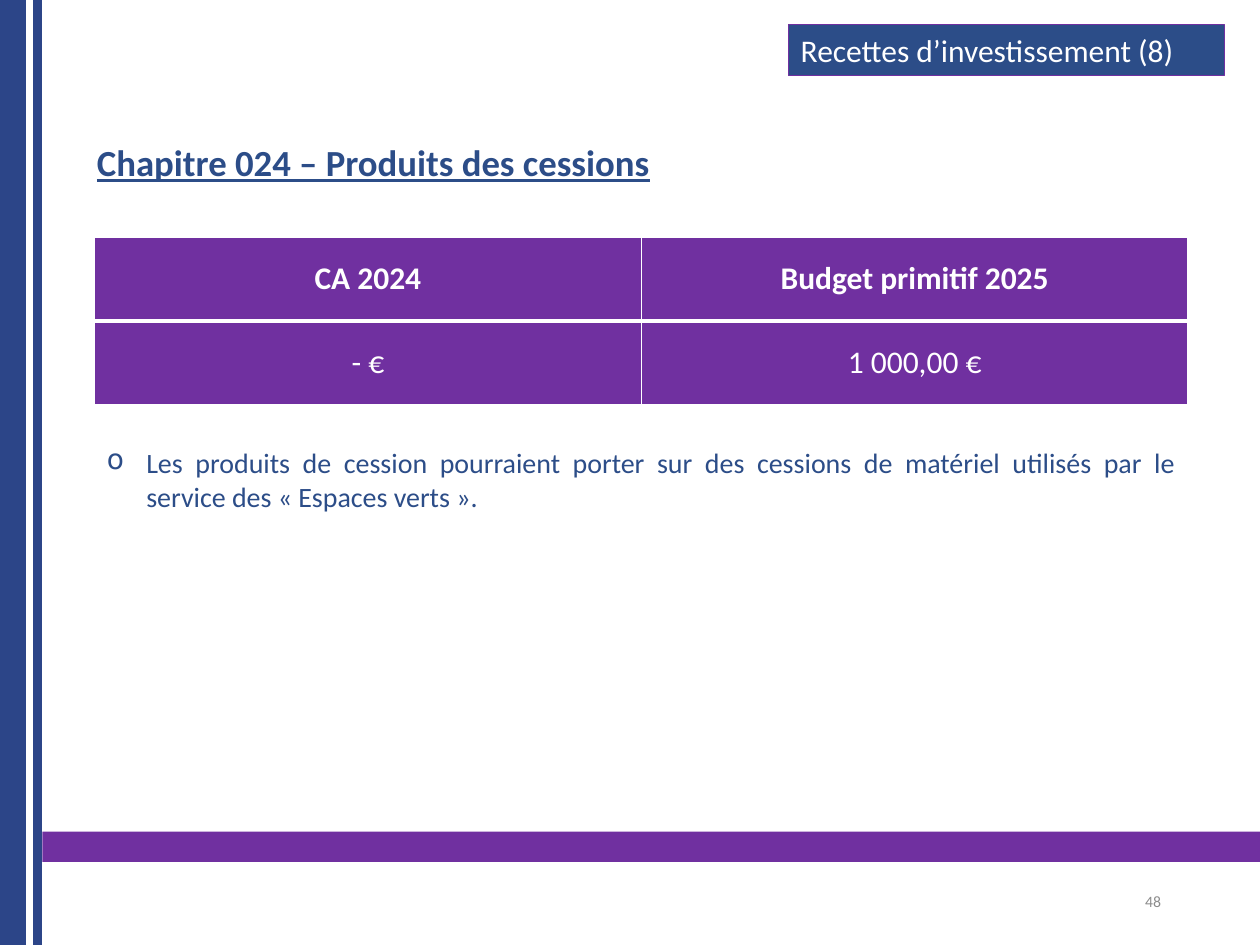
from dataclasses import dataclass
from typing import Optional

from lxml.etree import SubElement
from pptx import Presentation
from pptx.dml.color import RGBColor
from pptx.enum.shapes import MSO_SHAPE
from pptx.enum.text import MSO_ANCHOR, MSO_AUTO_SIZE, PP_ALIGN
from pptx.oxml import parse_xml
from pptx.oxml.ns import nsdecls, qn
from pptx.util import Pt


@dataclass(frozen=True)
class Theme:
    font: str = "Calibri"
    bar_blue: str = "2C4588"
    blue: str = "2C4D88"
    purple: str = "7030A0"
    white: str = "FFFFFF"
    gray: str = "8C8C8C"
    heading: float = 21
    large: float = 18
    body: float = 16
    small: float = 9


@dataclass(frozen=True)
class Area:
    left: float
    top: float
    width: float
    height: float

    def lengths(self) -> tuple:
        return tuple(Pt(n) for n in (self.left, self.top, self.width, self.height))


@dataclass(frozen=True)
class Panel:
    area: Area
    fill: str
    line: Optional[str] = None


THEME = Theme()
BARS = (
    Panel(Area(24.2, 475.2, 695.8, 17.3), THEME.purple),
    Panel(Area(0, 0, 14.8, 540), THEME.bar_blue),
    Panel(Area(18.9, 0, 5.1, 540), THEME.bar_blue),
)
BANNER = Panel(Area(450.5, 14.2, 249.1, 29.1), THEME.blue, THEME.purple)
TITLE_AREA = Area(39.6, 79.2, 660.2, 45.4)
TABLE_AREA = Area(54, 135.6, 625, 95.6)
NOTE_AREA = Area(54, 251.3, 625, 46)
NUMBER_AREA = Area(508.5, 500.5, 162, 28.8)
ROWS = (("CA 2024", "Budget primitif 2025"), ("- €", "1 000,00 €"))
NOTE = ("Les produits de cession pourraient porter sur des cessions de matériel "
        "utilisés par le service des « Espaces verts ».")


def write(frame, text: str, size: float, color: str, align=PP_ALIGN.LEFT, bold: bool = False):
    """Fill the first paragraph of a frame and return it."""
    para = frame.paragraphs[0]
    para.text = text
    para.alignment = align
    para.font.name = THEME.font
    para.font.size = Pt(size)
    para.font.bold = bold
    para.font.color.rgb = RGBColor.from_string(color)
    return para


def add_panel(page, panel: Panel):
    """Draw a filled rectangle, outlined when a line colour is given."""
    box = page.shapes.add_shape(MSO_SHAPE.RECTANGLE, *panel.area.lengths())
    box.shadow.inherit = False
    box.fill.solid()
    box.fill.fore_color.rgb = RGBColor.from_string(panel.fill)
    if panel.line:
        box.line.color.rgb = RGBColor.from_string(panel.line)
        box.line.width = Pt(0.75)
    else:
        box.line.fill.background()
    return box


def add_text_box(page, area: Area, anchor=MSO_ANCHOR.TOP):
    """Add a wrapping text box and return its frame."""
    frame = page.shapes.add_textbox(*area.lengths()).text_frame
    frame.word_wrap = True
    frame.vertical_anchor = anchor
    return frame


def add_title(page, text: str) -> None:
    """Place and format the title placeholder."""
    title = page.shapes.title
    title.left, title.top, title.width, title.height = TITLE_AREA.lengths()
    frame = title.text_frame
    frame.auto_size = MSO_AUTO_SIZE.NONE
    frame.vertical_anchor = MSO_ANCHOR.TOP
    para = write(frame, text, THEME.heading, THEME.blue, bold=True)
    para.font.underline = True
    para.line_spacing = 0.9
    para._p.get_or_add_pPr().set("marL", str(Pt(8.6)))


def set_borders(cell, top: float, bottom: float) -> None:
    """Give a cell white borders, with its own top and bottom widths."""
    widths = {"lnL": 1, "lnR": 1, "lnT": top, "lnB": bottom}
    properties = cell._tc.get_or_add_tcPr()
    for index, (tag, width) in enumerate(widths.items()):
        properties.insert(index, parse_xml(
            f'<a:{tag} {nsdecls("a")} w="{Pt(width)}"><a:solidFill>'
            f'<a:srgbClr val="{THEME.white}"/></a:solidFill></a:{tag}>'))


def add_budget_table(page) -> None:
    """Draw the two-column budget table."""
    table = page.shapes.add_table(len(ROWS), len(ROWS[0]), *TABLE_AREA.lengths()).table
    for row_index, texts in enumerate(ROWS):
        is_header = row_index == 0
        for column_index, text in enumerate(texts):
            cell = table.cell(row_index, column_index)
            cell.fill.solid()
            cell.fill.fore_color.rgb = RGBColor.from_string(THEME.purple)
            cell.vertical_anchor = MSO_ANCHOR.MIDDLE
            write(cell.text_frame, text, THEME.large, THEME.white, PP_ALIGN.CENTER, is_header)
            set_borders(cell, 1 if is_header else 3, 3 if is_header else 1)


def add_note(page) -> None:
    """Write the justified bullet below the table."""
    frame = add_text_box(page, NOTE_AREA)
    properties = frame.paragraphs[0]._p.get_or_add_pPr()
    properties.set("marL", str(Pt(22.5)))
    properties.set("indent", str(Pt(-22.5)))
    SubElement(properties, qn("a:buChar")).set("char", "o")
    write(frame, NOTE, THEME.body, THEME.blue, PP_ALIGN.JUSTIFY)


def main() -> None:
    """Build the slide and save it."""
    deck = Presentation()
    deck.slide_width, deck.slide_height = Pt(720), Pt(540)
    page = deck.slides.add_slide(deck.slide_layouts[5])
    for bar in BARS:
        add_panel(page, bar)
    add_title(page, "Chapitre 024 – Produits des cessions")
    number = add_text_box(page, NUMBER_AREA, MSO_ANCHOR.MIDDLE)
    write(number, "48", THEME.small, THEME.gray, PP_ALIGN.RIGHT)
    add_budget_table(page)
    banner = add_panel(page, BANNER)
    write(banner.text_frame, "Recettes d’investissement (8)", THEME.large, THEME.white)
    add_note(page)
    deck.save("out.pptx")


if __name__ == "__main__":
    main()
